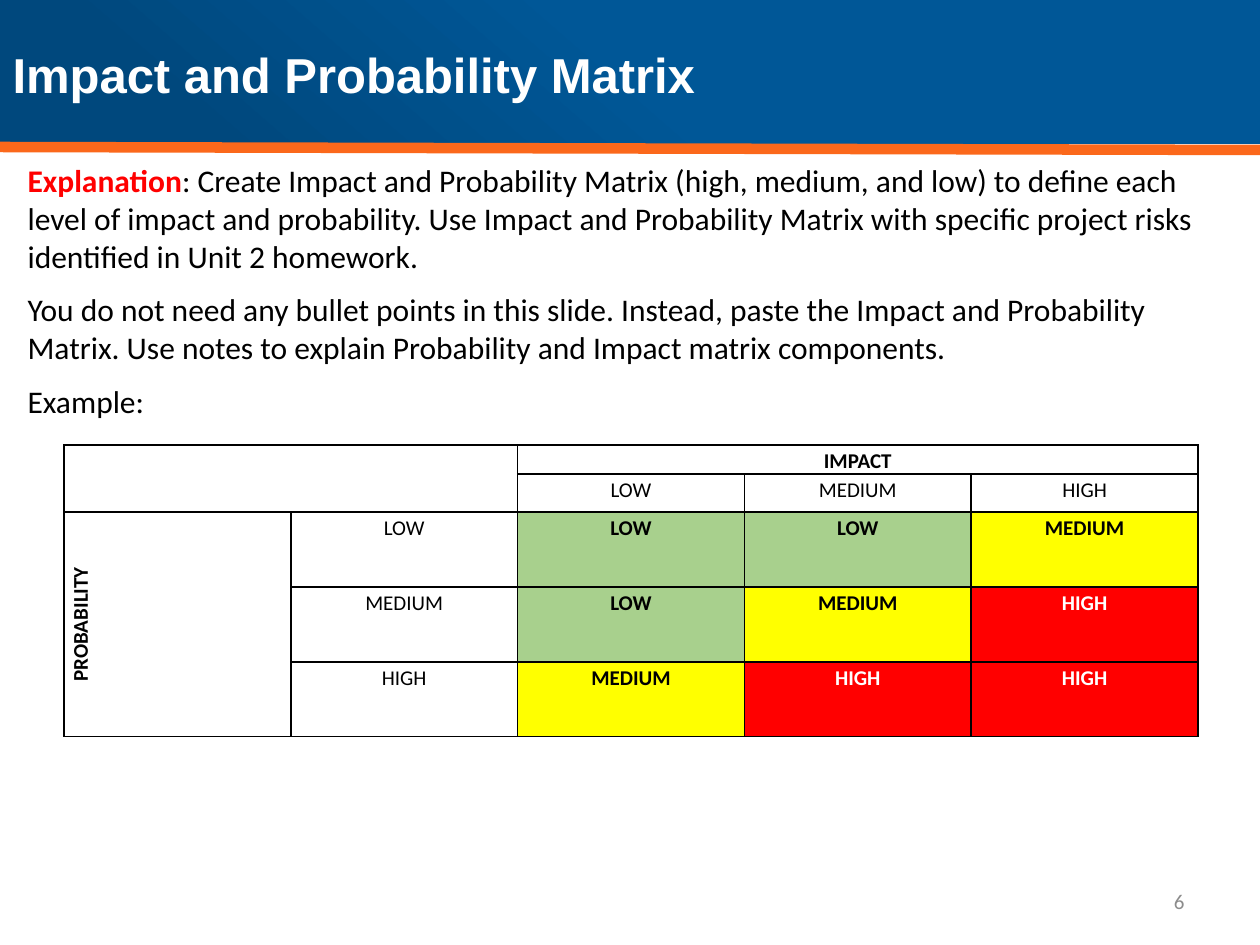
from dataclasses import dataclass

from lxml import etree
from pptx import Presentation
from pptx.dml.color import RGBColor
from pptx.enum import shapes, text
from pptx.oxml import parse_xml
from pptx.oxml.ns import nsdecls, qn
from pptx.util import Pt

EMU_PER_PX = 914400 / 126


@dataclass(frozen=True)
class Theme:
    """Colours, fonts and type sizes of the slide."""
    blue: str = "005797"
    navy: str = "00487D"
    orange: str = "FB681B"
    black: str = "000000"
    white: str = "FFFFFF"
    grey: str = "8C8C8C"
    red: str = "FF0000"
    yellow: str = "FFFF00"
    green: str = "A8D08D"
    heading_font: str = "Arial"
    body_font: str = "Calibri"
    title_size: int = 28
    body_size: int = 18
    small_size: int = 12


THEME = Theme()
RATINGS = {
    "LOW": (THEME.green, THEME.black),
    "MEDIUM": (THEME.yellow, THEME.black),
    "HIGH": (THEME.red, THEME.white),
}
LEVELS = list(RATINGS)
MATRIX = [
    ["LOW", "LOW", "MEDIUM"],
    ["LOW", "MEDIUM", "HIGH"],
    ["MEDIUM", "HIGH", "HIGH"],
]
EXPLANATION = [
    [("Explanation", THEME.red, True),
     (": Create Impact and Probability Matrix (high, medium, and low) to define each level of "
      "impact and probability. Use Impact and Probability Matrix with specific project risks "
      "identified in Unit 2 homework.", THEME.black, False)],
    [("You do not need any bullet points in this slide. Instead, paste the Impact and "
      "Probability Matrix. Use notes to explain Probability and Impact matrix components.",
      THEME.black, False)],
    [("Example:", THEME.black, False)],
]


def px(length):
    """Turn pixels into EMU."""
    return round(length * EMU_PER_PX)


def rgb(colour):
    """Turn a hex string into a colour."""
    return RGBColor.from_string(colour)


def place(shape, box):
    """Move a shape into a pixel box."""
    shape.left, shape.top, shape.width, shape.height = map(px, box)


def add_run(paragraph, wording, size, colour, bold=False, font=THEME.body_font):
    """Append one formatted run to a paragraph."""
    run = paragraph.add_run()
    run.text = wording
    run.font.name, run.font.size, run.font.bold = font, Pt(size), bold
    run.font.color.rgb = rgb(colour)


def add_banner(slide, box):
    """Lay the blue banner and its orange rule behind the title."""
    left, top, width, height = box
    banner = slide.shapes.add_shape(shapes.MSO_SHAPE.RECTANGLE, *map(px, box))
    banner.shadow.inherit = False
    banner.line.fill.background()
    banner.fill.gradient()
    banner.fill.gradient_angle = 229
    stops = zip(banner.fill.gradient_stops, [(0.49, THEME.blue), (0.85, THEME.navy)])
    for stop, (position, colour) in stops:
        stop.position = position
        stop.color.rgb = rgb(colour)
    rule = slide.shapes.add_connector(
        shapes.MSO_CONNECTOR.STRAIGHT, px(left), px(top + height + 3),
        px(left + width), px(top + height + 6))
    rule.line.color.rgb = rgb(THEME.orange)
    rule.line.width = Pt(6)
    etree.SubElement(rule._element.spPr, qn("a:effectLst"))
    for index, part in enumerate((banner, rule), start=2):
        slide.shapes._spTree.insert(index, part._element)


def fill_title(slide, box):
    """Write the heading in the title placeholder."""
    heading = slide.shapes.title
    place(heading, box)
    frame = heading.text_frame
    frame.auto_size = text.MSO_AUTO_SIZE.NONE
    frame.vertical_anchor = text.MSO_ANCHOR.MIDDLE
    paragraph = frame.paragraphs[0]
    paragraph.alignment = text.PP_ALIGN.LEFT
    add_run(paragraph, "Impact and Probability Matrix", THEME.title_size, THEME.white,
            True, THEME.heading_font)


def fill_explanation(slide, box):
    """Write the unbulleted explanation in the body placeholder."""
    explanation = slide.placeholders[1]
    place(explanation, box)
    frame = explanation.text_frame
    frame.auto_size = text.MSO_AUTO_SIZE.NONE
    for index, runs in enumerate(EXPLANATION):
        paragraph = frame.add_paragraph() if index else frame.paragraphs[0]
        properties = paragraph._p.get_or_add_pPr()
        properties.set("marL", "0")
        properties.set("indent", "0")
        etree.SubElement(properties, qn("a:buNone"))
        paragraph.space_before = Pt(9 if index else 0)
        for wording, colour, bold in runs:
            add_run(paragraph, wording, THEME.body_size, colour, bold)


def style_cell(cell, fill=None):
    """Give a cell its black borders, margins and fill."""
    cell.margin_left = cell.margin_right = px(9)
    cell.margin_top = cell.margin_bottom = 0
    properties = cell._tc.get_or_add_tcPr()
    for side in ("lnL", "lnR", "lnT", "lnB"):
        properties.append(parse_xml(
            f'<a:{side} {nsdecls("a")} w="12700"><a:solidFill>'
            f'<a:srgbClr val="{THEME.black}"/></a:solidFill></a:{side}>'))
    if fill:
        cell.fill.solid()
        cell.fill.fore_color.rgb = rgb(fill)
    else:
        cell.fill.background()


def write_cell(cell, wording, bold=False, colour=THEME.black):
    """Write one centred label in a cell."""
    paragraph = cell.text_frame.paragraphs[0]
    paragraph.alignment = text.PP_ALIGN.CENTER
    paragraph.line_spacing = 1.15
    add_run(paragraph, wording, THEME.small_size, colour, bold)


def add_matrix(slide, box):
    """Build the impact and probability table."""
    left, top, width, height = box
    header_height = 29
    level_height = (height - 2 * header_height) // len(LEVELS)
    table = slide.shapes.add_table(5, 5, *map(px, box)).table
    table.first_row = table.horz_banding = False
    for column in table.columns:
        column.width = px(width / 5)
    for index, row in enumerate(table.rows):
        row.height = px(header_height if index < 2 else level_height)
        for number, cell in enumerate(row.cells):
            rated = index > 1 and number > 1
            style_cell(cell, RATINGS[MATRIX[index - 2][number - 2]][0] if rated else None)
    for first, last in [((0, 0), (1, 1)), ((0, 2), (0, 4)), ((2, 0), (4, 0))]:
        table.cell(*first).merge(table.cell(*last))
    write_cell(table.cell(0, 2), "IMPACT", True)
    probability = table.cell(2, 0)
    probability._tc.get_or_add_tcPr().set("vert", "vert270")
    probability.vertical_anchor = text.MSO_ANCHOR.MIDDLE
    write_cell(probability, "PROBABILITY", True)
    for index, level in enumerate(LEVELS):
        write_cell(table.cell(1, index + 2), level)
        write_cell(table.cell(index + 2, 1), level)
        for number, rating in enumerate(MATRIX[index]):
            write_cell(table.cell(index + 2, number + 2), rating, True, RATINGS[rating][1])


def add_page_number(slide, box):
    """Write the page number at the right of its box."""
    frame = slide.shapes.add_textbox(*map(px, box)).text_frame
    frame.word_wrap = True
    frame.vertical_anchor = text.MSO_ANCHOR.MIDDLE
    frame.paragraphs[0].alignment = text.PP_ALIGN.RIGHT
    add_run(frame.paragraphs[0], "6", THEME.small_size, THEME.grey)


def main():
    """Build and save the slide."""
    deck = Presentation()
    deck.slide_width, deck.slide_height = px(1260), px(945)
    slide = deck.slides.add_slide(deck.slide_layouts[1])
    add_banner(slide, (0, 0, 1260, 144))
    fill_title(slide, (0, 0, 955, 148))
    add_page_number(slide, (903, 876, 294, 50))
    fill_explanation(slide, (15, 155, 1231, 760))
    add_matrix(slide, (64, 445, 1134, 283))
    deck.save("out.pptx")


if __name__ == "__main__":
    main()
